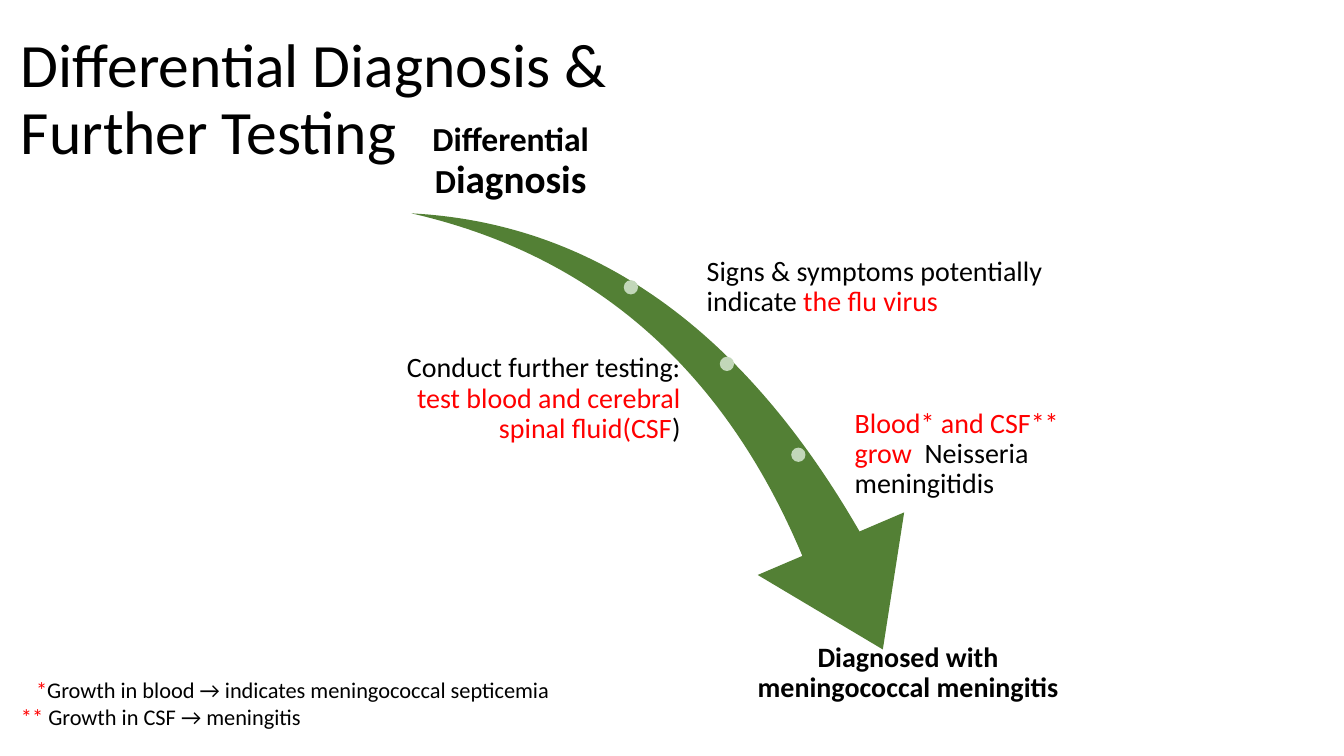
from dataclasses import dataclass

from pptx import Presentation
from pptx.dml.color import RGBColor
from pptx.enum.shapes import MSO_SHAPE
from pptx.enum.text import MSO_ANCHOR, PP_ALIGN
from pptx.util import Cm, Pt

SWOOSH, OVAL = MSO_SHAPE.SWOOSH_ARROW, MSO_SHAPE.OVAL
TOP, MIDDLE, BOTTOM = MSO_ANCHOR.TOP, MSO_ANCHOR.MIDDLE, MSO_ANCHOR.BOTTOM
LEFT, CENTER, RIGHT = PP_ALIGN.LEFT, PP_ALIGN.CENTER, PP_ALIGN.RIGHT

FONT = "Calibri"
COLORS = {"text": "000000", "accent": "FF0000", "arrow": "538035", "dot": "C2D7B9"}
LABEL_HEIGHT = 2.59
LABEL_INSET = 0.08
DOT_SIZE = 0.36
DOTS = [(15.72, 7.06), (18.14, 8.99), (19.94, 11.28)]


@dataclass
class Phrase:
    text: str
    size: int = 20
    color: str = "text"
    bold: bool = False


@dataclass
class Label:
    left: float
    top: float
    width: float
    phrases: list[Phrase]
    align: PP_ALIGN = LEFT
    anchor: MSO_ANCHOR = MIDDLE


LABELS = [
    Label(9.58, 2.57, 6.58, [Phrase("Differential D", 24, bold=True),
                             Phrase("iagnosis", 28, bold=True)], CENTER, BOTTOM),
    Label(17.73, 5.94, 9.6, [Phrase("Signs & symptoms potentially indicate "),
                             Phrase("the flu virus", color="accent")]),
    Label(9.58, 8.76, 7.65, [Phrase("Conduct further testing: "),
                             Phrase("test blood and cerebral spinal fluid(CSF", color="accent"),
                             Phrase(")")], RIGHT),
    Label(21.46, 10.16, 5.87, [Phrase("Blood* and CSF** grow", color="accent"),
                               Phrase("  Neisseria meningitidis")]),
    Label(18.44, 16.13, 8.89, [Phrase("Diagnosed with meningococcal meningitis", bold=True)],
          CENTER, TOP),
]
FOOTNOTES = [
    [Phrase("*", 16, "accent"),
     Phrase("Growth in blood → indicates meningococcal septicemia", 16)],
    [Phrase("** ", 16, "accent"), Phrase("Growth in CSF → meningitis", 16)],
]


def add_text_box(slide, left: float, top: float, width: float, height: float, anchor: MSO_ANCHOR):
    tf = slide.shapes.add_textbox(Cm(left), Cm(top), Cm(width), Cm(height)).text_frame
    tf.word_wrap = True
    tf.vertical_anchor = anchor
    return tf


def fill_paragraph(p, phrases: list[Phrase], spacing: float = 0.9, align: PP_ALIGN = LEFT) -> None:
    p.alignment = align
    p.line_spacing = spacing
    for phrase in phrases:
        r = p.add_run()
        r.text = phrase.text
        r.font.name = FONT
        r.font.size = Pt(phrase.size)
        r.font.bold = phrase.bold
        r.font.color.rgb = RGBColor.from_string(COLORS[phrase.color])


def add_label(slide, label: Label) -> None:
    tf = add_text_box(slide, label.left, label.top, label.width, LABEL_HEIGHT, label.anchor)
    tf.margin_left = tf.margin_right = tf.margin_top = tf.margin_bottom = Cm(LABEL_INSET)
    fill_paragraph(tf.paragraphs[0], label.phrases, align=label.align)


def add_filled(slide, kind: MSO_SHAPE, left: float, top: float, width: float, height: float,
               color: str):
    s = slide.shapes.add_shape(kind, Cm(left), Cm(top), Cm(width), Cm(height))
    s.shadow.inherit = False
    s.fill.solid()
    s.fill.fore_color.rgb = RGBColor.from_string(COLORS[color])
    s.line.fill.background()
    return s


def main() -> None:
    prs = Presentation()
    prs.slide_width, prs.slide_height = Cm(33.87), Cm(19.05)
    slide = prs.slides.add_slide(prs.slide_layouts[6])

    title = add_text_box(slide, 0.28, 0.3, 15.9, 4.5, MIDDLE)
    fill_paragraph(title.paragraphs[0], [Phrase("Differential Diagnosis & Further Testing", 44)])

    arrow = add_filled(slide, SWOOSH, 10.06, 5.79, 13.94, 9.73, "arrow")
    arrow.rotation = 73.3
    arrow.adjustments[0] = 0.16
    arrow.adjustments[1] = 0.31
    for left, top in DOTS:
        add_filled(slide, OVAL, left, top, DOT_SIZE, DOT_SIZE, "dot")

    for label in LABELS:
        add_label(slide, label)

    notes = add_text_box(slide, 0.28, 16.92, 15.57, 1.63, TOP)
    blood, csf = notes.paragraphs[0], notes.add_paragraph()
    for p, phrases in zip((blood, csf), FOOTNOTES):
        fill_paragraph(p, phrases, spacing=1.0)
    blood_format = blood._p.get_or_add_pPr()
    blood_format.set("marL", str(Cm(0.38)))
    blood_format.set("indent", "0")

    prs.save("out.pptx")


if __name__ == "__main__":
    main()
